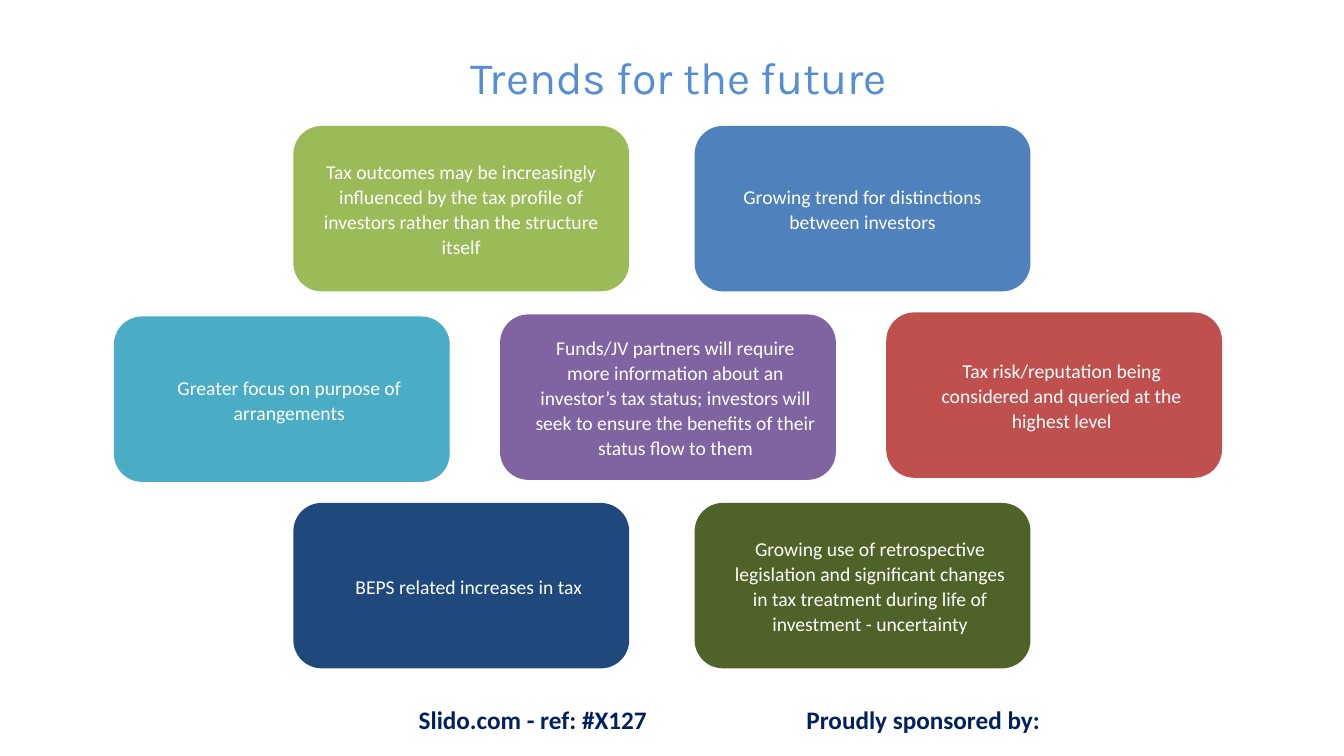
import pptx
from pptx.dml.color import RGBColor
from pptx.enum.shapes import MSO_SHAPE
from pptx.enum.text import MSO_ANCHOR, PP_ALIGN
from pptx.util import Inches, Pt

WHITE = RGBColor(0xFF, 0xFF, 0xFF)
NAVY = RGBColor(0x00, 0x20, 0x60)
TITLE_BLUE = RGBColor(0x55, 0x8E, 0xD5)
GREEN = RGBColor(0x9B, 0xBB, 0x59)
BLUE = RGBColor(0x4F, 0x81, 0xBD)
TEAL = RGBColor(0x4B, 0xAC, 0xC6)
PURPLE = RGBColor(0x80, 0x64, 0xA2)
RED = RGBColor(0xC0, 0x50, 0x4D)
DARK_BLUE = RGBColor(0x1F, 0x49, 0x7D)
DARK_GREEN = RGBColor(0x4F, 0x62, 0x28)

TITLE = "Trends for the future"
FOOTERS = [
    ("Slido.com - ref: #X127", 3.18, 4.21, PP_ALIGN.CENTER),
    ("Proudly sponsored by:", 7.9, 2.62, PP_ALIGN.LEFT),
]
# Each row: left of first card, step across, top, step down, text indent, cards
ROWS = [
    (2.92, 3.98, 1.26, 0, 0, [
        ("Tax outcomes may be increasingly influenced by the tax profile of "
         "investors rather than the structure itself", GREEN),
        ("Growing trend for distinctions between investors", BLUE),
    ]),
    (1.14, 3.83, 3.15, -0.02, 0.15, [
        ("Greater focus on purpose of arrangements", TEAL),
        ("Funds/JV partners will require more information about an investor’s "
         "tax status; investors will seek to ensure the benefits of their "
         "status flow to them", PURPLE),
        ("Tax risk/reputation being considered and queried at the highest level",
         RED),
    ]),
    (2.92, 3.98, 5, 0, 0.15, [
        ("BEPS related increases in tax", DARK_BLUE),
        ("Growing use of retrospective legislation and significant changes in "
         "tax treatment during life of investment - uncertainty", DARK_GREEN),
    ]),
]
CARD_W, CARD_H = 3.31, 1.62


def write(shape, text, font, size, color, align, bold=False):
    tf = shape.text_frame
    tf.word_wrap = True
    p = tf.paragraphs[0]
    p.text = text
    p.alignment = align
    p.font.name = font
    p.font.size = Pt(size)
    p.font.bold = bold
    p.font.color.rgb = color
    return tf


def add_card(s, left, top, text, color, indent):
    card = s.shapes.add_shape(MSO_SHAPE.ROUNDED_RECTANGLE, Inches(left),
                              Inches(top), Inches(CARD_W), Inches(CARD_H))
    card.shadow.inherit = False
    card.fill.solid()
    card.fill.fore_color.rgb = color
    card.line.color.rgb = color
    card.line.width = Pt(1.5)
    tf = write(card, text, "Calibri", 14, WHITE, PP_ALIGN.CENTER)
    tf.vertical_anchor = MSO_ANCHOR.MIDDLE
    tf.margin_left = tf.margin_right = Inches(0.1)
    tf.margin_top = tf.margin_bottom = Inches(0.1)
    p = tf.paragraphs[0]
    p.line_spacing = 1.06
    if indent:
        pPr = p._p.get_or_add_pPr()
        pPr.set("marL", str(Inches(indent)))
        pPr.set("indent", "0")


prs = pptx.Presentation()
prs.slide_width, prs.slide_height = Inches(13.33), Inches(7.5)
s = prs.slides.add_slide(prs.slide_layouts[6])

for text, left, width, align in FOOTERS:
    box = s.shapes.add_textbox(Inches(left), Inches(6.94), Inches(width), Inches(0.4))
    write(box, text, "Calibri", 18, NAVY, align, bold=True)

title = s.shapes.add_textbox(Inches(0.8), Inches(0.25), Inches(11.87), Inches(1.01))
tf = write(title, TITLE, "Karla", 32, TITLE_BLUE, PP_ALIGN.CENTER)
tf.vertical_anchor = MSO_ANCHOR.MIDDLE

for left, step, top, drop, indent, cards in ROWS:
    for i, (text, color) in enumerate(cards):
        add_card(s, left + i * step, top + i * drop, text, color, indent)

prs.save("out.pptx")
